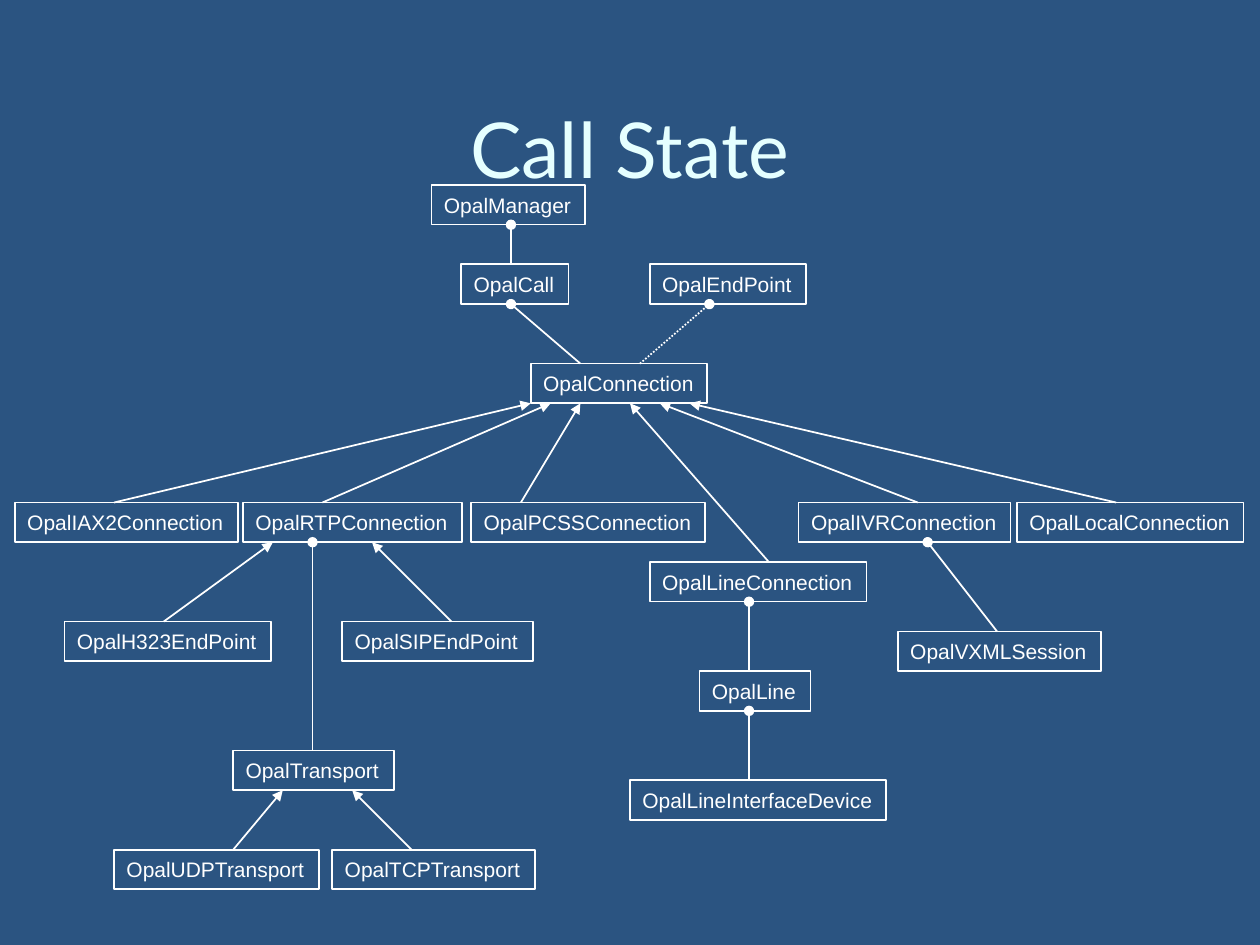
import pptx
import pptx.dml.color
import pptx.enum.dml
import pptx.enum.shapes
import pptx.enum.text
import pptx.oxml
import pptx.oxml.ns
import pptx.util
from pptx.util import Cm

COLOURS = {"background": "2B5481", "title": "E5FFFF", "diagram": "FFFFFF"}
CLASS_HEIGHT = 0.8

# name: left, top, width in cm within the diagram
CLASSES = {
    "OpalManager": (8.4, 0, 3.1),
    "OpalCall": (9, 1.6, 2.16),
    "OpalEndPoint": (12.8, 1.6, 3.15),
    "OpalConnection": (10.4, 3.6, 3.56),
    "OpalIAX2Connection": (0, 6.4, 4.5),
    "OpalRTPConnection": (4.6, 6.4, 4.42),
    "OpalPCSSConnection": (9.2, 6.4, 4.72),
    "OpalIVRConnection": (15.8, 6.4, 4.27),
    "OpalLocalConnection": (20.2, 6.4, 4.57),
    "OpalLineConnection": (12.8, 7.6, 4.37),
    "OpalH323EndPoint": (1, 8.8, 4.17),
    "OpalSIPEndPoint": (6.6, 8.8, 3.84),
    "OpalVXMLSession": (17.8, 9, 4.09),
    "OpalLine": (13.8, 9.8, 2.24),
    "OpalTransport": (4.4, 11.4, 3.25),
    "OpalLineInterfaceDevice": (12.4, 12, 5.16),
    "OpalUDPTransport": (2, 13.4, 4.14),
    "OpalTCPTransport": (6.4, 13.4, 4.09),
}

# child, x at its top, parent, x at its bottom
INHERITANCE = [
    ("OpalIAX2Connection", 2, "OpalConnection", 10.4),
    ("OpalRTPConnection", 6.2, "OpalConnection", 10.8),
    ("OpalPCSSConnection", 10.2, "OpalConnection", 11.4),
    ("OpalLineConnection", 15.2, "OpalConnection", 12.4),
    ("OpalIVRConnection", 18.2, "OpalConnection", 13),
    ("OpalLocalConnection", 22.2, "OpalConnection", 13.6),
    ("OpalH323EndPoint", 3, "OpalRTPConnection", 5.2),
    ("OpalSIPEndPoint", 8.8, "OpalRTPConnection", 7.2),
    ("OpalUDPTransport", 4.4, "OpalTransport", 5.4),
    ("OpalTCPTransport", 8, "OpalTransport", 6.8),
]
OWNERSHIP = [
    ("OpalCall", 10, "OpalManager", 10),
    ("OpalConnection", 11.4, "OpalCall", 10),
    ("OpalTransport", 6, "OpalRTPConnection", 6),
    ("OpalLine", 14.8, "OpalLineConnection", 14.8),
    ("OpalLineInterfaceDevice", 14.8, "OpalLine", 14.8),
    ("OpalVXMLSession", 19.8, "OpalIVRConnection", 18.4),
]
REFERENCES = [("OpalConnection", 12.6, "OpalEndPoint", 14)]


def rgb(part):
    """Return the colour of a named part."""
    return pptx.dml.color.RGBColor.from_string(COLOURS[part])


def add_words(frame, words, font, size, part):
    """Write one styled run into the first paragraph of a frame."""
    run = frame.paragraphs[0].add_run()
    run.text = words
    run.font.name = font
    run.font.size = pptx.util.Pt(size)
    run.font.color.rgb = rgb(part)


def style_line(line):
    """Give an outline or link the diagram's stroke."""
    line.color.rgb = rgb("diagram")
    line.width = pptx.util.Pt(1)


def add_title(slide, left, top, width, height):
    """Place the centred slide title in its box."""
    title = slide.shapes.add_textbox(Cm(left), Cm(top), Cm(width), Cm(height))
    frame = title.text_frame
    frame.word_wrap = True
    frame.vertical_anchor = pptx.enum.text.MSO_ANCHOR.MIDDLE
    frame.paragraphs[0].alignment = pptx.enum.text.PP_ALIGN.CENTER
    add_words(frame, "Call State", "Lato", 44, "title")


def add_class(slide, name, left, top, width):
    """Draw one outlined class with its name."""
    box = slide.shapes.add_shape(
        pptx.enum.shapes.MSO_SHAPE.RECTANGLE,
        Cm(left), Cm(top), Cm(width), Cm(CLASS_HEIGHT))
    box.shadow.inherit = False
    box.fill.background()
    style_line(box.line)
    frame = box.text_frame
    frame.word_wrap = False
    frame.auto_size = pptx.enum.text.MSO_AUTO_SIZE.SHAPE_TO_FIT_TEXT
    frame.paragraphs[0].alignment = pptx.enum.text.PP_ALIGN.LEFT
    add_words(frame, name, "Arial", 12, "diagram")


def add_link(slide, start, end, head, dash=None):
    """Draw a link that ends in the given head."""
    link = slide.shapes.add_connector(
        pptx.enum.shapes.MSO_CONNECTOR.STRAIGHT,
        *(Cm(length) for length in (*start, *end)))
    style_line(link.line)
    if dash is not None:
        link.line.dash_style = dash
    namespace = pptx.oxml.ns.nsdecls("a")
    link.line._get_or_add_ln().append(
        pptx.oxml.parse_xml(f'<a:tailEnd {namespace} type="{head}"/>'))
    link._element.spPr.append(
        pptx.oxml.parse_xml(f"<a:effectLst {namespace}/>"))


def add_class_diagram(slide, left, top):
    """Place the classes and their links from the diagram's corner."""
    for name, (x, y, width) in CLASSES.items():
        add_class(slide, name, left + x, top + y, width)
    dotted = pptx.enum.dml.MSO_LINE.ROUND_DOT
    for links, head, dash in (
            (INHERITANCE, "triangle", None),
            (OWNERSHIP, "oval", None),
            (REFERENCES, "oval", dotted)):
        for child, child_x, parent, parent_x in links:
            start = left + child_x, top + CLASSES[child][1]
            end = left + parent_x, top + CLASSES[parent][1] + CLASS_HEIGHT
            add_link(slide, start, end, head, dash)


def main():
    """Build and save the call state slide."""
    deck = pptx.Presentation()
    deck.slide_width, deck.slide_height = Cm(25.4), Cm(19.05)
    slide = deck.slides.add_slide(deck.slide_layouts[6])
    slide.background.fill.solid()
    slide.background.fill.fore_color.rgb = rgb("background")
    add_title(slide, 1.27, 1.07, 22.86, 3.81)
    add_class_diagram(slide, 0.3, 3.73)
    deck.save("out.pptx")


if __name__ == "__main__":
    main()
